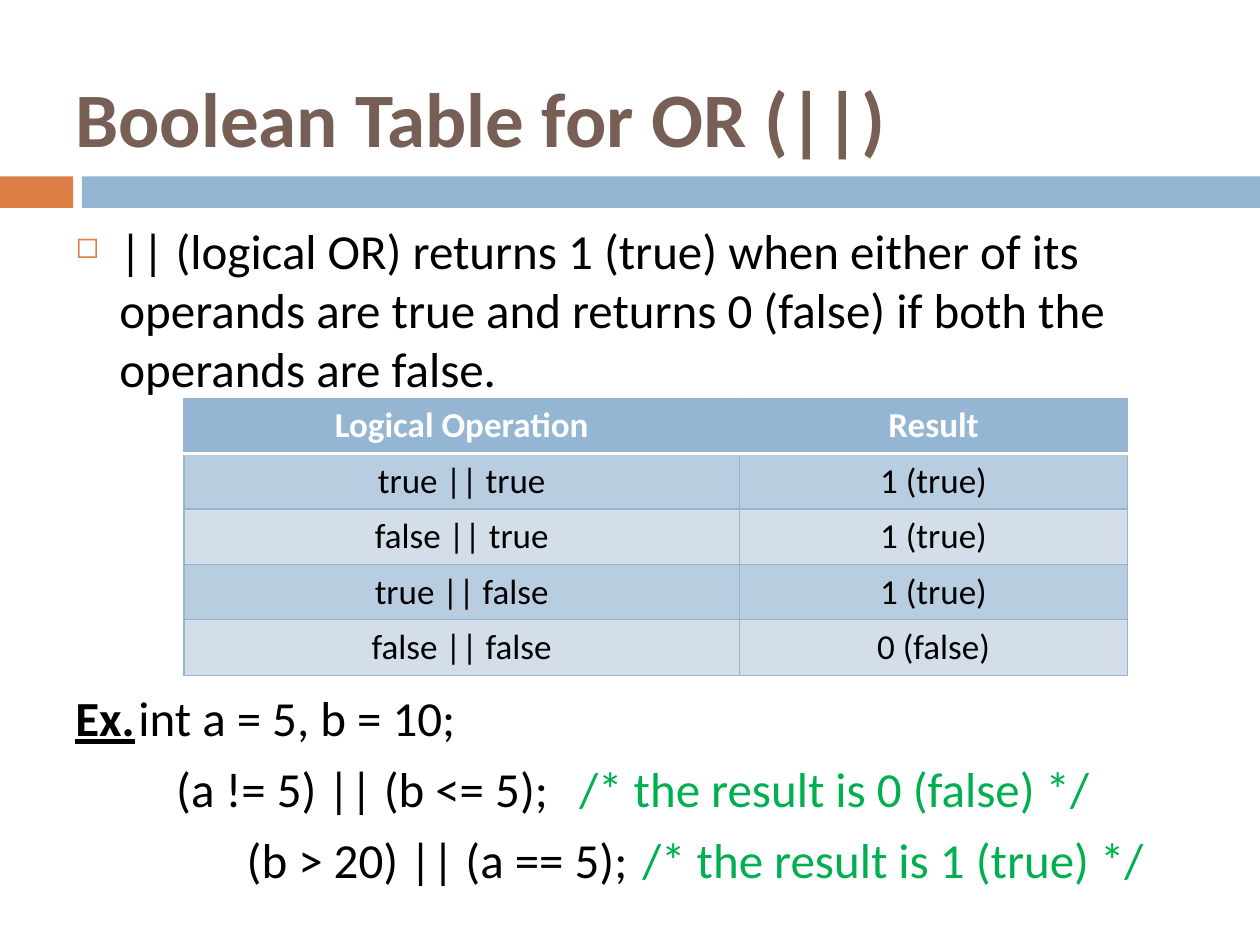
from lxml import etree
from pptx import Presentation
from pptx import util as u
from pptx.dml.color import RGBColor
from pptx.enum import shapes, text
from pptx.oxml import ns

FONT = "Calibri"
COLORS = {
    "accent": "DD8047", "blue": "94B6D2", "title": "775F55", "text": "000000",
    "comment": "00B050", "white": "FFFFFF", "band_dark": "B9CDE1", "band_light": "D3DEE9",
}
TRUTH_TABLE = [
    ("Logical Operation", "Result"),
    ("true || true", "1 (true)"),
    ("false || true", "1 (true)"),
    ("true || false", "1 (true)"),
    ("false || false", "0 (false)"),
]
# Label, code, comment, start of the line, tab stop (inches)
EXAMPLES = [
    ("Ex.", "\tint a = 5, b = 10;", "", 0, 1.36),
    ("", "(a != 5) || (b <= 5);", "\t/* the result is 0 (false) */", 0.8, 4.08),
    ("", "(b > 20) || (a == 5);", "\t/* the result is 1 (true) */", 1.36, 4.54),
]


def rgb(name):
    return RGBColor.from_string(COLORS[name])


def add_xml(parent, tag, **attributes):
    return etree.SubElement(parent, ns.qn(tag), attributes)


def style(paragraph, size, color, bold=False):
    font = paragraph.font
    font.name, font.size, font.bold = FONT, u.Pt(size), bold
    font.color.rgb = rgb(color)


def set_indent(paragraph, margin, first_line):
    properties = paragraph._p.get_or_add_pPr()
    properties.set("marL", str(u.Inches(margin)))
    properties.set("indent", str(u.Inches(first_line)))
    return properties


def add_text_frame(slide, left, top, width, height):
    frame = slide.shapes.add_textbox(*map(u.Inches, (left, top, width, height))).text_frame
    frame.word_wrap = True
    return frame


def add_header(slide, left, top, width):
    # Title
    frame = add_text_frame(slide, left + 0.5, top, 9, 1.25)
    frame.vertical_anchor = text.MSO_ANCHOR.MIDDLE
    title = frame.paragraphs[0]
    title.text = "Boolean Table for OR (||)"
    style(title, 44, "title", bold=True)

    # Two-part rule
    for start, end, color in ((0, 0.58, "accent"), (0.65, width, "blue")):
        bar = slide.shapes.add_shape(
            shapes.MSO_SHAPE.RECTANGLE, u.Inches(left + start), u.Inches(top + 1.1),
            u.Inches(end - start), u.Inches(0.25))
        bar.shadow.inherit = False
        bar.fill.solid()
        bar.fill.fore_color.rgb = rgb(color)
        bar.line.fill.background()


def add_definition(slide, left, top, width, height):
    definition = add_text_frame(slide, left, top, width, height).paragraphs[0]
    definition.text = ("|| (logical OR) returns 1 (true) when either of its operands are true "
                       "and returns 0 (false) if both the operands are false.")
    style(definition, 28, "text")
    properties = set_indent(definition, 0.35, -0.35)
    bullet_color = add_xml(properties, "a:buClr")
    add_xml(bullet_color, "a:srgbClr", val=COLORS["accent"])
    add_xml(properties, "a:buSzPct", val="60000")
    add_xml(properties, "a:buChar", char="◻")
    # Bullet settings come before the default run settings
    properties.append(properties.find(ns.qn("a:defRPr")))


def set_borders(cell, bottom):
    properties = cell._tc.get_or_add_tcPr()
    sides = {"a:lnL": ("blue", 0.79), "a:lnR": ("blue", 0.79),
             "a:lnT": ("blue", 0.79), "a:lnB": bottom}
    for position, (tag, (color, points)) in enumerate(sides.items()):
        line = add_xml(properties, tag, w=str(u.Pt(points)))
        add_xml(add_xml(line, "a:solidFill"), "a:srgbClr", val=COLORS[color])
        properties.insert(position, line)


def add_truth_table(slide, left, top, column_widths, row_height):
    table = slide.shapes.add_table(
        len(TRUTH_TABLE), len(column_widths), u.Inches(left), u.Inches(top),
        u.Inches(sum(column_widths)), u.Inches(row_height * len(TRUTH_TABLE))).table
    for column, width in zip(table.columns, column_widths):
        column.width = u.Inches(width)
    for r, values in enumerate(TRUTH_TABLE):
        table.rows[r].height = u.Inches(row_height)
        header = r == 0
        fill = "blue" if header else ("band_light", "band_dark")[r % 2]
        for c, value in enumerate(values):
            cell = table.cell(r, c)
            cell.fill.solid()
            cell.fill.fore_color.rgb = rgb(fill)
            set_borders(cell, ("white", 1.5) if header else ("blue", 0.79))
            entry = cell.text_frame.paragraphs[0]
            entry.text = value
            entry.alignment = text.PP_ALIGN.CENTER
            style(entry, 20, "white" if header else "text", bold=header)


def add_examples(slide, left, top, width, height):
    frame = add_text_frame(slide, left, top, width, height)
    for i, (label, code, comment, start, stop) in enumerate(EXAMPLES):
        line = frame.add_paragraph() if i else frame.paragraphs[0]
        style(line, 28, "text")
        if i:
            line.space_before = u.Pt(7)
        properties = set_indent(line, 0, start)
        tabs = add_xml(properties, "a:tabLst")
        add_xml(tabs, "a:tab", pos=str(u.Inches(stop)), algn="l")
        properties.append(properties.find(ns.qn("a:defRPr")))
        if label:
            label_run = line.add_run()
            label_run.text = label
            label_run.font.bold = label_run.font.underline = True
        line.add_run().text = code
        if comment:
            comment_run = line.add_run()
            comment_run.text = comment
            comment_run.font.color.rgb = rgb("comment")


def main():
    deck = Presentation()
    deck.slide_width, deck.slide_height = u.Inches(10), u.Inches(7.5)
    slide = deck.slides.add_slide(deck.slide_layouts[6])
    add_header(slide, 0, 0.3, 10)
    add_definition(slide, 0.5, 1.7, 9.3, 1.5)
    add_truth_table(slide, 1.46, 3.16, (4.41, 3.08), 0.44)
    add_examples(slide, 0.5, 5.41, 9.3, 1.8)
    deck.save("out.pptx")


if __name__ == "__main__":
    main()
